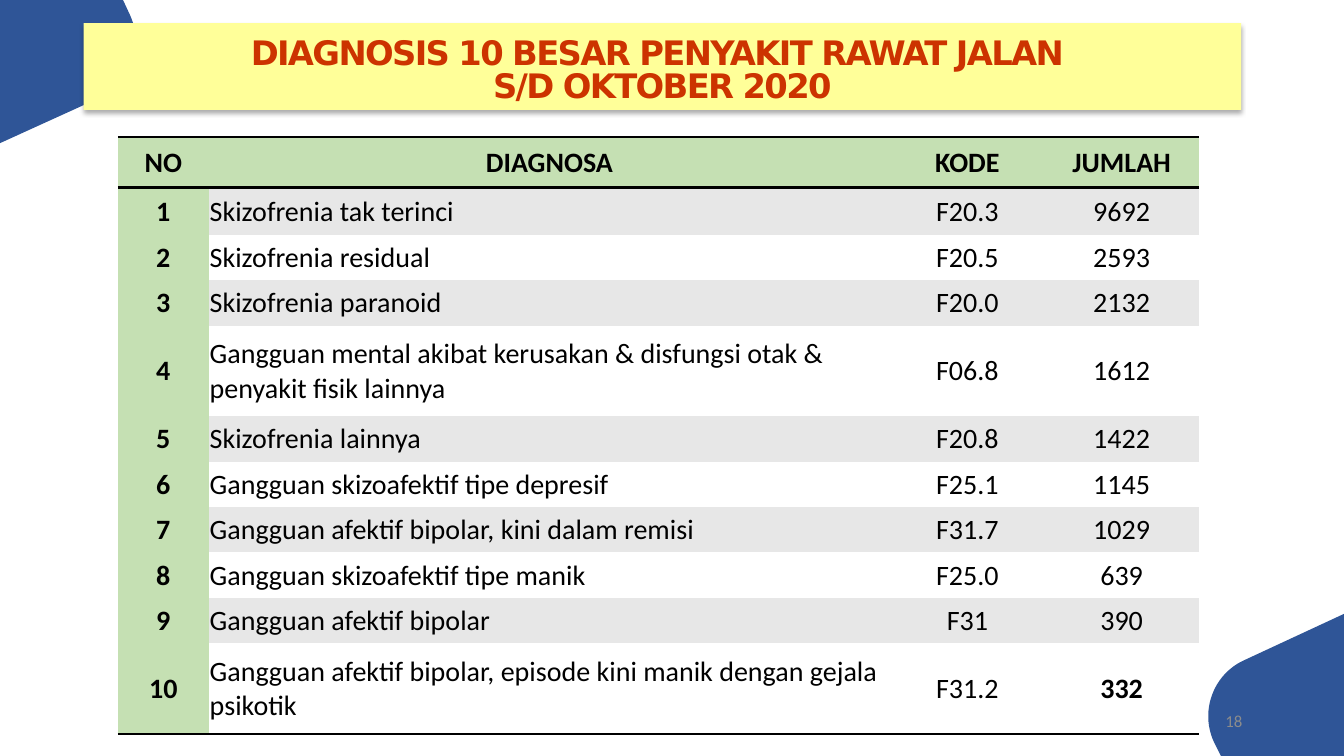
from copy import deepcopy

from lxml import etree
from pptx import Presentation
from pptx.dml.color import RGBColor
from pptx.enum.text import MSO_ANCHOR, MSO_AUTO_SIZE, PP_ALIGN
from pptx.oxml.ns import qn
from pptx.util import Inches, Pt

CENTER, LEFT, RIGHT = PP_ALIGN.CENTER, PP_ALIGN.LEFT, PP_ALIGN.RIGHT
MIDDLE, BOTTOM = MSO_ANCHOR.MIDDLE, MSO_ANCHOR.BOTTOM

BLUE = RGBColor(0x2F, 0x55, 0x97)
YELLOW = RGBColor(0xFF, 0xFF, 0x99)
RED = RGBColor(0xCC, 0x33, 0x00)
GREEN = RGBColor(0xC5, 0xE0, 0xB3)
BAND = RGBColor(0xE7, 0xE7, 0xE7)
WHITE = RGBColor(0xFF, 0xFF, 0xFF)
BLACK = RGBColor(0x00, 0x00, 0x00)
GRAY = RGBColor(0x8C, 0x8C, 0x8C)

NO_STYLE = "{2D5ABB26-0587-4C30-8999-92F81FD0307C}"
TITLE_LINES = ["DIAGNOSIS 10 BESAR PENYAKIT RAWAT JALAN ", "S/D OKTOBER 2020"]
HEADERS = ["NO", "DIAGNOSA", "KODE", "JUMLAH"]
DIAGNOSES = [
    ("Skizofrenia tak terinci", "F20.3", 9692),
    ("Skizofrenia residual", "F20.5", 2593),
    ("Skizofrenia paranoid", "F20.0", 2132),
    ("Gangguan mental akibat kerusakan & disfungsi otak & penyakit fisik lainnya",
     "F06.8", 1612),
    ("Skizofrenia lainnya", "F20.8", 1422),
    ("Gangguan skizoafektif tipe depresif", "F25.1", 1145),
    ("Gangguan afektif bipolar, kini dalam remisi", "F31.7", 1029),
    ("Gangguan skizoafektif tipe manik", "F25.0", 639),
    ("Gangguan afektif bipolar", "F31", 390),
    ("Gangguan afektif bipolar, episode kini manik dengan gejala psikotik",
     "F31.2", 332),
]
COLUMN_WIDTHS = [0.9, 6.76, 1.53, 1.53]
ROW_HEIGHTS = [0.5, 0.47, 0.45, 0.45, 0.9, 0.45, 0.45, 0.45, 0.45, 0.45, 0.9]

# Corner outlines: offsets from the slide corner, with one curve in the middle
TOP_LEFT = [(0, 0), (1.22, 0), (1.29, 0.15), (1.43, 0.46), (1.29, 0.83),
            (0.99, 0.97), (0, 1.42)]
BOTTOM_RIGHT = [(0, 0), (-1.22, 0), (-1.29, -0.14), (-1.43, -0.44),
                (-1.3, -0.81), (-0.99, -0.95), (0, -1.41)]


def style_span(span, color, **formats):
    span.font.color.rgb = color
    for name, value in formats.items():
        setattr(span.font, name, value)


def curve_points(start, first, second, end, steps=24):
    points = []
    for step in range(1, steps + 1):
        t = step / steps
        weights = ((1 - t) ** 3, 3 * t * (1 - t) ** 2, 3 * t * t * (1 - t), t ** 3)
        points.append(tuple(sum(w * point[axis] for w, point in
                                zip(weights, (start, first, second, end)))
                            for axis in (0, 1)))
    return points


def add_corner(page, x, y, outline):
    points = outline[:3] + curve_points(*outline[2:6]) + outline[6:]
    points = [(Inches(x + dx), Inches(y + dy)) for dx, dy in points]
    builder = page.shapes.build_freeform(*points[0])
    builder.add_line_segments(points[1:], close=True)
    corner = builder.convert_to_shape()
    corner.fill.solid()
    corner.fill.fore_color.rgb = BLUE
    corner.line.fill.background()
    corner.shadow.inherit = False


def add_shadow(shape):
    effects = etree.SubElement(shape.element.spPr, qn("a:effectLst"))
    shadow = etree.SubElement(effects, qn("a:outerShdw"), blurRad=str(Pt(3.5)),
                              dist=str(Pt(2.2)), dir="5400000", rotWithShape="0")
    color = etree.SubElement(shadow, qn("a:srgbClr"), val=str(BLACK))
    etree.SubElement(color, qn("a:alpha"), val="32000")


def add_title(page, left, top, width, height):
    box = page.shapes.title
    place = {"left": left, "top": top, "width": width, "height": height}
    for name, value in place.items():
        setattr(box, name, Inches(value))
    box.fill.solid()
    box.fill.fore_color.rgb = YELLOW
    add_shadow(box)
    frame = box.text_frame
    frame.auto_size = MSO_AUTO_SIZE.NONE
    frame.word_wrap = True
    frame.vertical_anchor = BOTTOM
    para = frame.paragraphs[0]
    para.alignment = CENTER
    para.line_spacing = 0.8
    for index, line in enumerate(TITLE_LINES):
        if index:
            para.add_line_break()
        span = para.add_run()
        span.text = line
        style_span(span, RED, name="DejaVu Sans", size=Pt(24.1), bold=True)
        span.font._element.set("spc", "-120")
    # The line break takes the text format too
    for line_break in para._p.findall(qn("a:br")):
        line_break.append(deepcopy(span.font._element))


def add_border(cell, side):
    line = etree.SubElement(cell._tc.get_or_add_tcPr(), qn("a:" + side),
                            w=str(Pt(2)))
    fill = etree.SubElement(line, qn("a:solidFill"))
    etree.SubElement(fill, qn("a:srgbClr"), val=str(BLACK))


def fill_cell(cell, text, color, bold, alignment, borders):
    for side in borders:
        add_border(cell, side)
    cell.fill.solid()
    cell.fill.fore_color.rgb = color
    cell.vertical_anchor = MIDDLE
    cell.margin_left = cell.margin_right = cell.margin_top = Inches(0.01)
    cell.margin_bottom = 0
    para = cell.text_frame.paragraphs[0]
    para.alignment = alignment
    span = para.add_run()
    span.text = str(text)
    style_span(span, BLACK, name="Calibri", size=Pt(20), bold=bold)


def add_diagnosis_table(page, left, top):
    rows = [HEADERS] + [(number, *row) for number, row in enumerate(DIAGNOSES, 1)]
    last = len(rows) - 1
    table = page.shapes.add_table(
        len(rows), len(HEADERS), Inches(left), Inches(top),
        Inches(sum(COLUMN_WIDTHS)), Inches(sum(ROW_HEIGHTS))).table
    table.first_row = table.horz_banding = False
    table._tbl.tblPr.find(qn("a:tableStyleId")).text = NO_STYLE
    for column, width in zip(table.columns, COLUMN_WIDTHS):
        column.width = Inches(width)
    for row, height in zip(table.rows, ROW_HEIGHTS):
        row.height = Inches(height)
    borders = {0: ["lnT", "lnB"], last: ["lnB"]}
    for r, values in enumerate(rows):
        for c, value in enumerate(values):
            heading = r == 0 or c == 0
            color = GREEN if heading else BAND if r % 2 else WHITE
            bold = heading or (r == last and c == 3)
            alignment = LEFT if c == 1 and r else CENTER
            fill_cell(table.cell(r, c), value, color, bold, alignment,
                      borders.get(r, []))


def add_page_number(page, left, top, width, height):
    box = page.shapes.add_textbox(*map(Inches, (left, top, width, height)))
    frame = box.text_frame
    frame.word_wrap = True
    frame.vertical_anchor = MIDDLE
    para = frame.paragraphs[0]
    para.alignment = RIGHT
    span = para.add_run()
    span.text = "18"
    style_span(span, GRAY, name="Calibri", size=Pt(12))


def main():
    deck = Presentation()
    deck.slide_width, deck.slide_height = Inches(13.33), Inches(7.5)
    page = deck.slides.add_slide(deck.slide_layouts[5])
    # Corner decoration
    add_corner(page, 13.33, 7.5, BOTTOM_RIGHT)
    add_corner(page, 0, 0, TOP_LEFT)
    # Title banner, in front of the corners
    add_title(page, 0.83, 0.23, 11.48, 0.86)
    page.shapes._spTree.append(page.shapes.title.element)
    # Page number and table
    add_page_number(page, 9.42, 6.95, 3, 0.4)
    add_diagnosis_table(page, 1.17, 1.36)
    deck.save("out.pptx")


if __name__ == "__main__":
    main()
